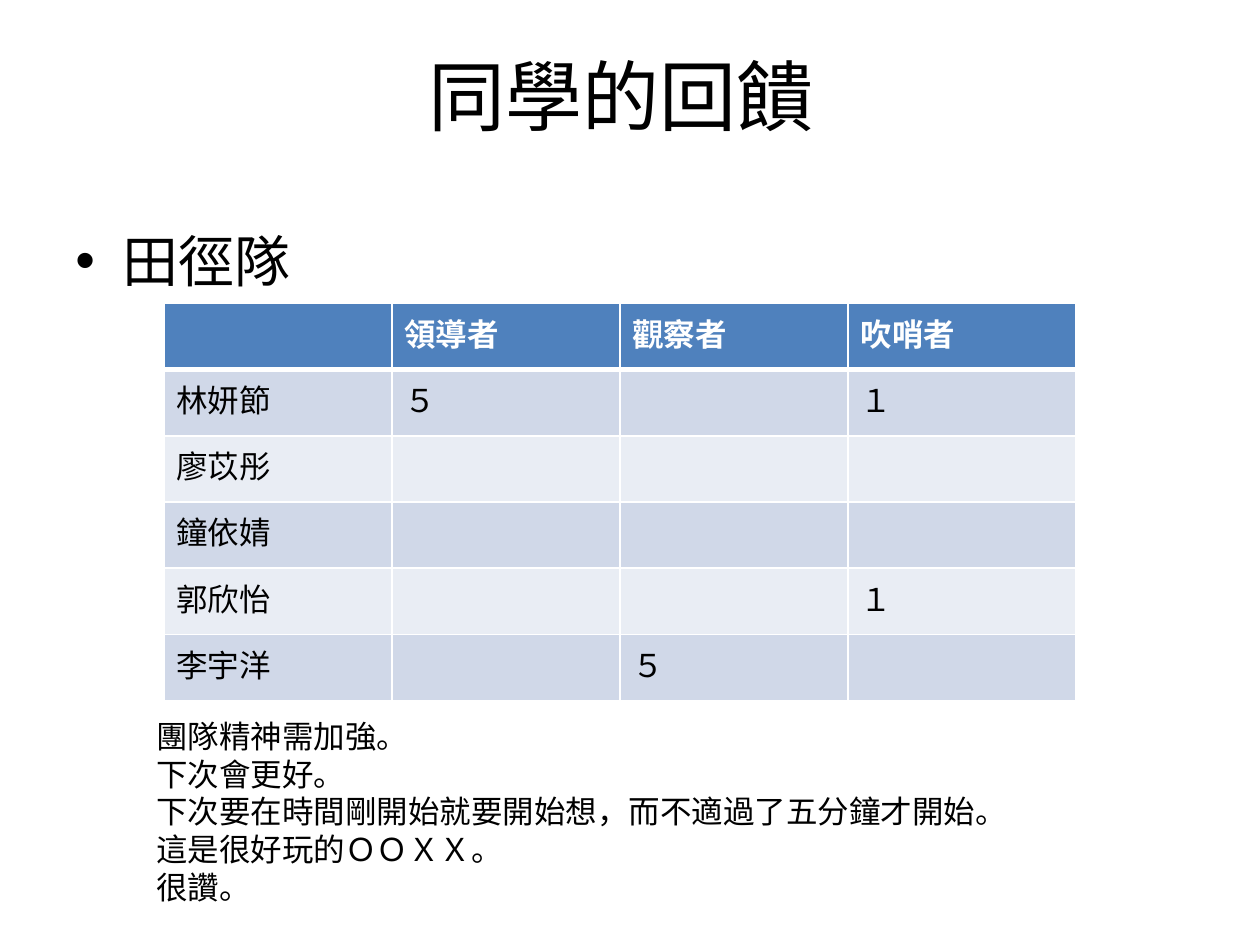
from pptx import Presentation
from pptx.dml.color import RGBColor as RGB
from pptx.enum.text import MSO_ANCHOR as Anchor, PP_ALIGN as Align
from pptx.oxml import parse_xml
from pptx.oxml.ns import nsdecls
from pptx.util import Inches, Pt

THEME = {
    "font": "Calibri",
    "ink": "000000",
    "paper": "FFFFFF",
    "header": "4F81BD",
    "bands": ("D0D8E8", "E9EDF4"),
    "title": 44,
    "body": 32,
    "small": 18,
    "rule": 1,
    "header_rule": 3,
}

prs = Presentation()
prs.slide_width, prs.slide_height = Inches(10), Inches(7.5)
W, H = prs.slide_width, prs.slide_height
slide = prs.slides.add_slide(prs.slide_layouts[6])
HANG = Inches(0.375)


def write(paragraph, text, size, color=THEME["ink"], bold=False, bullet=None):
    run = paragraph.add_run()
    run.text = text
    look = {"name": THEME["font"], "size": Pt(size), "bold": bold}
    for key, value in look.items():
        setattr(run.font, key, value)
    run.font.color.rgb = RGB.from_string(color)
    if bullet:
        props = paragraph._p.get_or_add_pPr()
        for key, value in {"marL": HANG, "indent": -HANG}.items():
            props.set(key, str(value))
        for tag in bullet:
            props.append(parse_xml(tag.format(nsdecls("a"))))


def text_frame(left, top, width, height, **formats):
    box = slide.shapes.add_textbox(
        int(W * left), int(H * top), int(W * width), int(H * height)
    )
    for key, value in {"word_wrap": True, **formats}.items():
        setattr(box.text_frame, key, value)
    return box.text_frame


title = text_frame(0.043, 0.0173, 0.9, 0.1667, vertical_anchor=Anchor.MIDDLE)
title.paragraphs[0].alignment = Align.CENTER
write(title.paragraphs[0], "同學的回饋", THEME["title"])

DOT = ('<a:buFont {} typeface="Arial"/>', '<a:buChar {} char="•"/>')
team = text_frame(0.05, 0.2333, 0.9, 0.592).paragraphs[0]
team.space_before = Pt(THEME["body"] * 0.2)
write(team, "田徑隊", THEME["body"], bullet=DOT)

votes = [
    ("", "領導者", "觀察者", "吹哨者"),
    ("林妍節", "５", "", "１"),
    ("廖苡彤", "", "", ""),
    ("鐘依婧", "", "", ""),
    ("郭欣怡", "", "", "１"),
    ("李宇洋", "", "５", ""),
]
vote_table = slide.shapes.add_table(
    len(votes), len(votes[0]), int(W * 0.13), int(H * 0.3213), int(W * 0.724), int(H * 0.42)
).table
for r, row in enumerate(votes):
    heading = r == 0
    fill = THEME["header"] if heading else THEME["bands"][(r - 1) % 2]
    ink = THEME["paper"] if heading else THEME["ink"]
    for c, text in enumerate(row):
        cell = vote_table.cell(r, c)
        paragraph = cell.text_frame.paragraphs[0]
        paragraph.font.size = Pt(THEME["small"])
        if text:
            write(paragraph, text, THEME["small"], ink, heading)
        rules = dict.fromkeys("LRTB", THEME["rule"])
        if heading:
            rules["B"] = THEME["header_rule"]
        elif r == 1:
            rules["T"] = THEME["header_rule"]
        for side, weight in rules.items():
            cell._tc.get_or_add_tcPr().append(parse_xml(
                f'<a:ln{side} {nsdecls("a")} w="{Pt(weight)}"><a:solidFill>'
                f'<a:srgbClr val="{THEME["paper"]}"/></a:solidFill></a:ln{side}>'
            ))
        cell.fill.solid()
        cell.fill.fore_color.rgb = RGB.from_string(fill)

NUMBER = ('<a:buFont {} typeface="+mj-lt"/>', '<a:buAutoNum {} type="arabicDbPeriod"/>')
comments = [
    "團隊精神需加強。",
    "下次會更好。",
    "下次要在時間剛開始就要開始想，而不適過了五分鐘才開始。",
    "這是很好玩的ＯＯＸＸ。",
    "很讚。",
]
feedback = text_frame(0.114, 0.752, 0.843, 0.216)
for i, comment in enumerate(comments):
    paragraph = feedback.add_paragraph() if i else feedback.paragraphs[0]
    write(paragraph, comment, THEME["small"], bullet=NUMBER)

prs.save("out.pptx")
